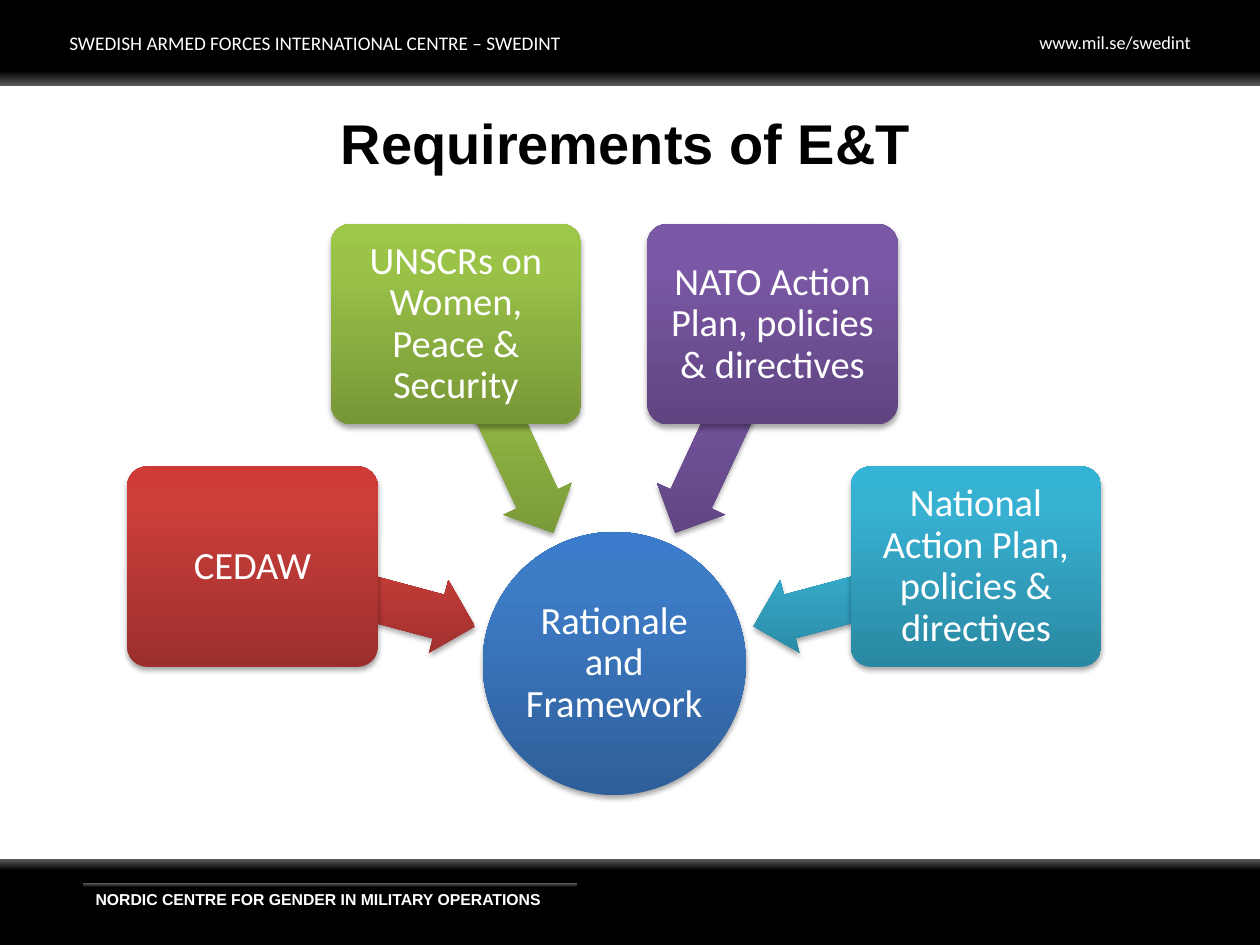
from math import cos, radians, sin

from lxml.etree import SubElement
from pptx import Presentation
from pptx.dml.color import RGBColor
from pptx.enum.shapes import MSO_SHAPE
from pptx.enum.text import MSO_ANCHOR, PP_ALIGN
from pptx.oxml.ns import qn
from pptx.util import Pt

TITLE = "Requirements of E&T"
HEADER = "SWEDISH ARMED FORCES INTERNATIONAL CENTRE – SWEDINT"
ADDRESS = "www.mil.se/swedint"
FOOTER = "NORDIC CENTRE FOR GENDER IN MILITARY OPERATIONS"
HUB = ("Rationale and Framework", ("2F5F99", "3D7CC7", "3A7CCB"))
SOURCES = [
    ("CEDAW", ("9C2F2D", "CB3E3A", "CE3B37")),
    ("UNSCRs on Women, Peace & Security", ("779737", "9BC348", "9DC746")),
    ("NATO Action Plan, policies & directives", ("5F4480", "7B58A6", "7C57A8")),
    ("National Action Plan, policies & directives", ("2A88A2", "37B1D2", "34B4D6")),
]

HEADER_STOPS = [(83, "000000"), (100, "595959")]
FOOTER_STOPS = [(0, "595959"), (13, "000000")]
DIAGRAM_POSITIONS = (0, 80, 100)

CENTRE = (351, 379.2)
HUB_SIZE = (150.4, 150.4)
BOX_SIZE, BOX_RADIUS = (143.2, 114.6), 214
ARROW_SIZE, ARROW_RADIUS = (131.8, 43), 148.3
FIRST_ANGLE, ANGLE_STEP = 195, 50


def color(value):
    return RGBColor.from_string(value)


def add_shape(slide, kind, left, top, width, height):
    shape = slide.shapes.add_shape(kind, Pt(left), Pt(top), Pt(width), Pt(height))
    shape.shadow.inherit = False
    shape.line.fill.background()
    return shape


def add_color(parent, value):
    return SubElement(parent, qn("a:srgbClr"), val=value)


def fill_gradient(shape, stops, angle):
    """Fill with any number of stops; the angle (clockwise) ignores shape rotation."""
    shape.fill.gradient()
    gradient = shape._element.spPr.find(qn("a:gradFill"))
    gradient.set("rotWithShape", "0")
    stop_list = gradient.find(qn("a:gsLst"))
    for stop in list(stop_list):
        stop_list.remove(stop)
    for position, value in stops:
        add_color(SubElement(stop_list, qn("a:gs"), pos=str(position * 1000)), value)
    gradient.find(qn("a:lin")).set("ang", str(angle * 60000))


def add_shadow(shape):
    effects = shape._element.spPr.find(qn("a:effectLst"))
    shadow = SubElement(effects, qn("a:outerShdw"), blurRad=str(Pt(3.1)),
                        dist=str(Pt(1.8)), dir="5400000", rotWithShape="0")
    SubElement(add_color(shadow, "000000"), qn("a:alpha"), val="35000")


def write(shape, text, size, font="Calibri", ink="FFFFFF", bold=False,
          align=PP_ALIGN.LEFT, anchor=MSO_ANCHOR.MIDDLE, inset=None, wrap=True):
    frame = shape.text_frame
    frame.word_wrap = wrap
    frame.vertical_anchor = anchor
    if inset is not None:
        frame.margin_left = frame.margin_right = Pt(inset)
        frame.margin_top = frame.margin_bottom = Pt(inset)
    paragraph = frame.paragraphs[0]
    paragraph.text = text
    paragraph.alignment = align
    paragraph.font.name = font
    paragraph.font.size = Pt(size)
    paragraph.font.bold = bold
    paragraph.font.color.rgb = color(ink)
    return paragraph


def add_diagram_shape(slide, kind, size, colors, angle=0, radius=0):
    """Centre a shape at an angle and distance from the hub."""
    x = CENTRE[0] + radius * cos(radians(angle))
    y = CENTRE[1] + radius * sin(radians(angle))
    width, height = size
    shape = add_shape(slide, kind, x - width / 2, y - height / 2, width, height)
    fill_gradient(shape, zip(DIAGRAM_POSITIONS, colors), 270)
    add_shadow(shape)
    return shape


def write_label(shape, text, inset):
    paragraph = write(shape, text, 22, align=PP_ALIGN.CENTER, inset=inset)
    paragraph.line_spacing = 0.9


def add_bands(slide):
    header = add_shape(slide, MSO_SHAPE.RECTANGLE, -3, 0, 723, 49)
    fill_gradient(header, HEADER_STOPS, 90)
    name = add_shape(slide, MSO_SHAPE.RECTANGLE, 36.7, 12.5, 345.6, 24.5)
    name.fill.solid()
    name.fill.fore_color.rgb = color("000000")
    write(name, HEADER, 11, inset=2.9)

    footer = add_shape(slide, MSO_SHAPE.RECTANGLE, 0, 491, 720, 49)
    fill_gradient(footer, FOOTER_STOPS, 90)
    unit = add_shape(slide, MSO_SHAPE.RECTANGLE, 47.5, 504.7, 282.2, 18)
    fill_gradient(unit, FOOTER_STOPS, 90)
    write(unit, FOOTER, 9, "Arial", bold=True, anchor=MSO_ANCHOR.TOP)

    address = slide.shapes.add_textbox(Pt(586.8), Pt(14.4), Pt(113), Pt(20.9))
    write(address, ADDRESS, 10.5, anchor=MSO_ANCHOR.TOP, wrap=False)


def add_diagram(slide):
    hub_text, hub_colors = HUB
    hub = add_diagram_shape(slide, MSO_SHAPE.OVAL, HUB_SIZE, hub_colors)
    write_label(hub, hub_text, 1.5)
    for index, (text, colors) in enumerate(SOURCES):
        angle = FIRST_ANGLE + index * ANGLE_STEP
        arrow = add_diagram_shape(slide, MSO_SHAPE.LEFT_ARROW, ARROW_SIZE, colors,
                                  angle, ARROW_RADIUS)
        arrow.adjustments[0] = 0.6
        arrow.adjustments[1] = 0.5
        arrow.rotation = angle
        box = add_diagram_shape(slide, MSO_SHAPE.ROUNDED_RECTANGLE, BOX_SIZE, colors,
                                angle, BOX_RADIUS)
        box.adjustments[0] = 0.1
        write_label(box, text, 3.6)


def main():
    deck = Presentation()
    deck.slide_width, deck.slide_height = Pt(720), Pt(540)
    slide = deck.slides.add_slide(deck.slide_layouts[5])
    add_bands(slide)
    title = slide.shapes.title
    title.left, title.top, title.width, title.height = Pt(110), Pt(51), Pt(495), Pt(60)
    write(title, TITLE, 32, "Arial", "000000", bold=True, align=PP_ALIGN.CENTER)
    add_diagram(slide)
    deck.save("out.pptx")


if __name__ == "__main__":
    main()
